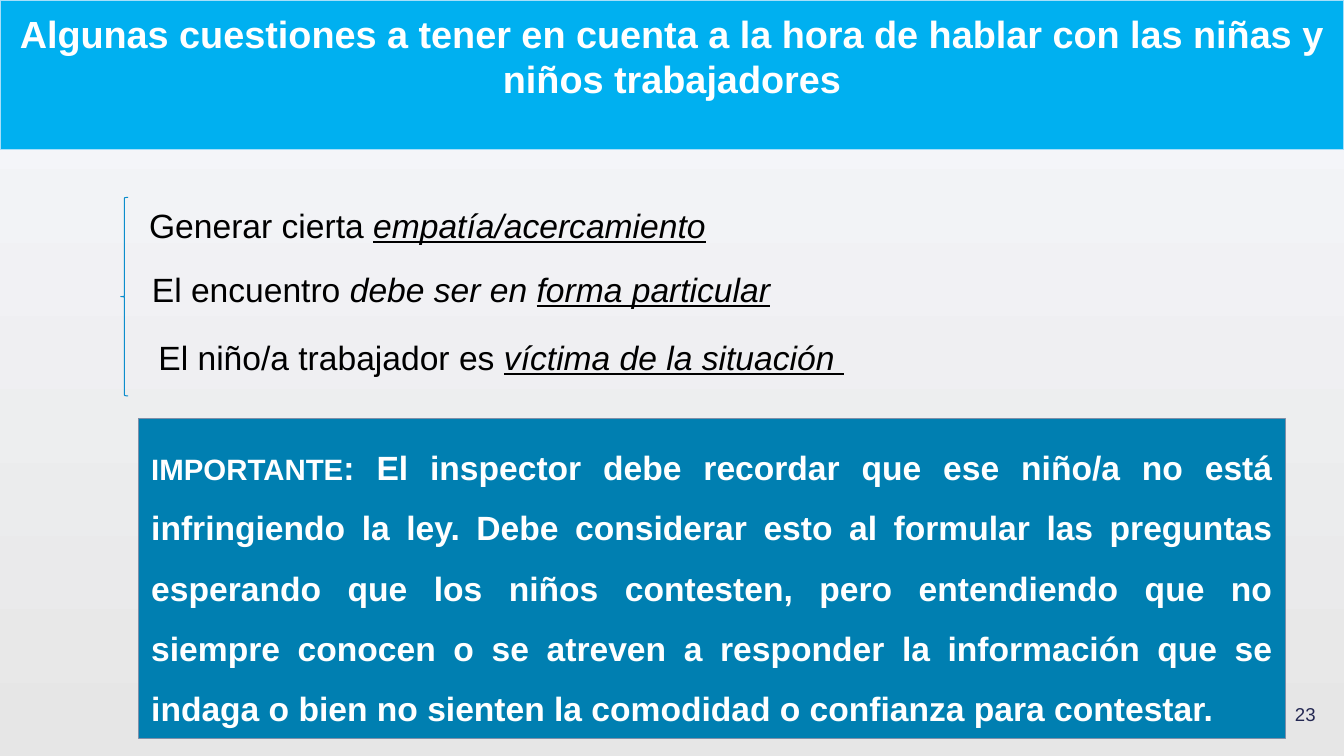
from pptx import Presentation
from pptx.dml.color import RGBColor
from pptx.enum.shapes import MSO_SHAPE
from pptx.enum.text import MSO_ANCHOR, PP_ALIGN
from pptx.util import Emu, Pt

EMU_PER_PX = 9525
FONT = "Arial"
WHITE, BLACK, NAVY = "FFFFFF", "000000", "242852"
SKY, PALE_SKY, TEAL, SLATE, BRACE_BLUE = "00B0F0", "A6DFFA", "007FB1", "7F8FA9", "0C8DCC"
ITALIC = "italic"
STRESSED = "italic underlined"


def px(length):
    return Emu(length * EMU_PER_PX)


def color(hex_string):
    return RGBColor.from_string(hex_string)


class SlideBuilder:
    def __init__(self, presentation):
        self.slide = presentation.slides.add_slide(presentation.slide_layouts[6])

    def gradient_background(self, *stops):
        """Fill the background from top to bottom with two (position, colour) stops."""
        fill = self.slide.background.fill
        fill.gradient()
        fill.gradient_angle = 270
        for stop, (position, hex_string) in zip(fill.gradient_stops, stops):
            stop.position = position
            stop.color.rgb = color(hex_string)

    def outline(self, preset, box, line, fill=None):
        shape = self.slide.shapes.add_shape(preset, *map(px, box))
        shape.shadow.inherit = False
        shape.line.color.rgb = color(line)
        shape.line.width = Pt(0.75)
        if fill:
            shape.fill.solid()
            shape.fill.fore_color.rgb = color(fill)
        else:
            shape.fill.background()
        return shape

    def set_text(self, shape, runs, size, hex_string, align=PP_ALIGN.LEFT, bold=False,
                 insets=(12, 7), anchor=MSO_ANCHOR.TOP, wrap=True):
        """Fill the shape with one paragraph of (text, style, size) runs; None inherits."""
        frame = shape.text_frame
        frame.word_wrap = wrap
        frame.vertical_anchor = anchor
        frame.margin_left = frame.margin_right = px(insets[0])
        frame.margin_top = frame.margin_bottom = px(insets[1])
        paragraph = frame.paragraphs[0]
        paragraph.alignment = align
        font = paragraph.font
        font.name, font.size, font.bold = FONT, Pt(size), bold
        font.color.rgb = color(hex_string)
        for text, style, run_size in runs:
            run = paragraph.add_run()
            run.text = text
            if style:
                run.font.italic = True
            if style == STRESSED:
                run.font.underline = True
            if run_size:
                run.font.size = Pt(run_size)
        return paragraph

    def panel(self, box, fill, line, runs, size, **options):
        shape = self.outline(MSO_SHAPE.RECTANGLE, box, line, fill)
        return self.set_text(shape, runs, size, WHITE, bold=True, **options)

    def text(self, box, runs, size, hex_string=BLACK, **options):
        shape = self.slide.shapes.add_textbox(*map(px, box))
        return self.set_text(shape, runs, size, hex_string, **options)


def main():
    presentation = Presentation()
    presentation.slide_width, presentation.slide_height = px(1280), px(720)
    builder = SlideBuilder(presentation)
    builder.gradient_background((0.03, "F6F7FB"), (1, "E6E6E6"))

    title = ("Algunas cuestiones a tener en cuenta a la hora de hablar "
             "con las niñas y niños trabajadores")
    builder.panel((0, 0, 1280, 142), SKY, PALE_SKY, [(title, None, None)], 27,
                  align=PP_ALIGN.CENTER, insets=(10, 10))
    builder.text((1186, 653, 77, 55), [("23", None, None)], 13.3, NAVY,
                 align=PP_ALIGN.RIGHT, insets=(10, 10), anchor=MSO_ANCHOR.MIDDLE)

    builder.outline(MSO_SHAPE.LEFT_BRACE, (115, 188, 7, 189), BRACE_BLUE)
    builder.text((130, 188, 1021, 52),
                 [("Generar cierta ", None, None),
                  ("empatía/acercamiento", STRESSED, None)], 24)
    builder.text((119, 249, 640, 52),
                 [("El encuentro", None, None), (" debe ser en ", ITALIC, None),
                  ("forma particular", STRESSED, None)], 24, align=PP_ALIGN.CENTER)
    builder.text((130, 314, 694, 52),
                 [(" El niño/a trabajador es ", None, None),
                  ("víctima de la situación ", STRESSED, None)], 24, wrap=False)

    advice = (": El inspector debe recordar que ese niño/a no está infringiendo la ley. "
              "Debe considerar esto al formular las preguntas esperando que los niños "
              "contesten, pero entendiendo que no siempre conocen o se atreven a responder "
              "la información que se indaga o bien no sienten la comodidad o confianza "
              "para contestar.")
    paragraph = builder.panel((132, 399, 1092, 304), TEAL, SLATE,
                              [("IMPORTANTE", None, 21), (advice, None, None)], 24,
                              align=PP_ALIGN.JUSTIFY)
    paragraph.line_spacing = 1.5

    presentation.save("out.pptx")


if __name__ == "__main__":
    main()
